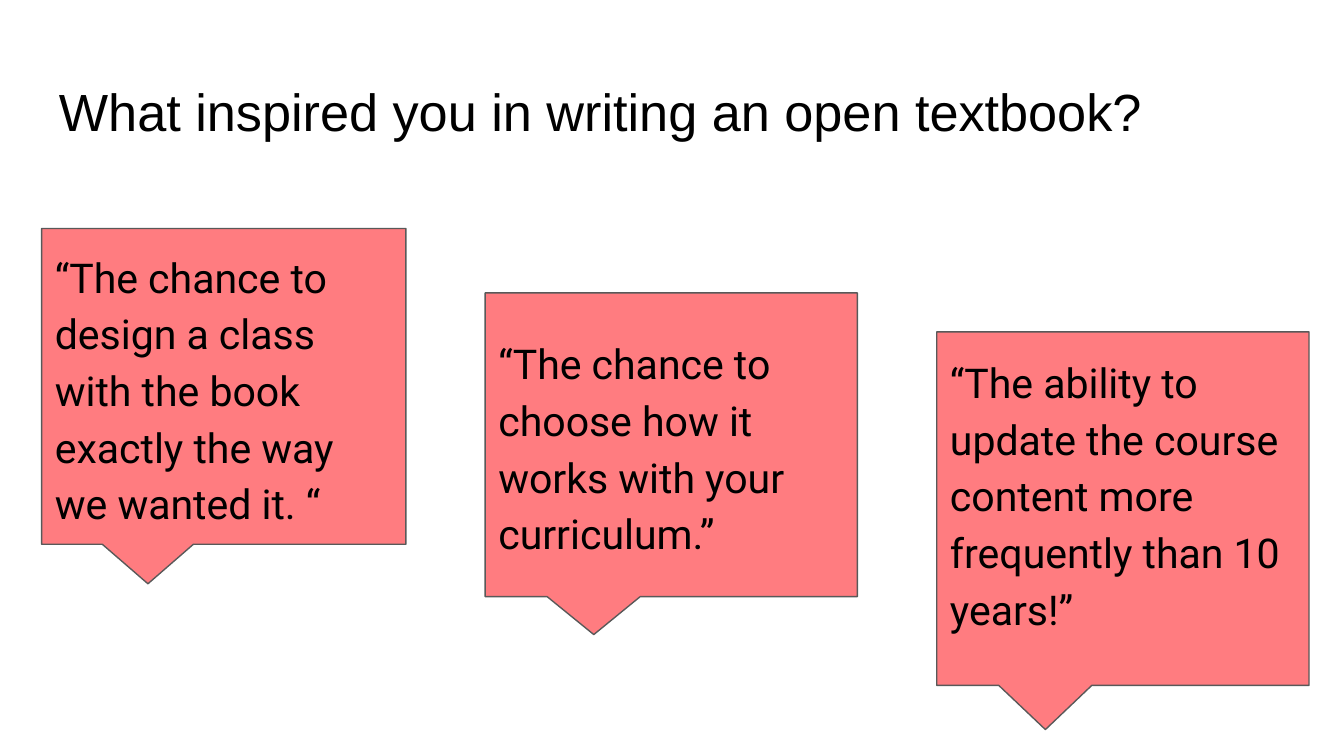
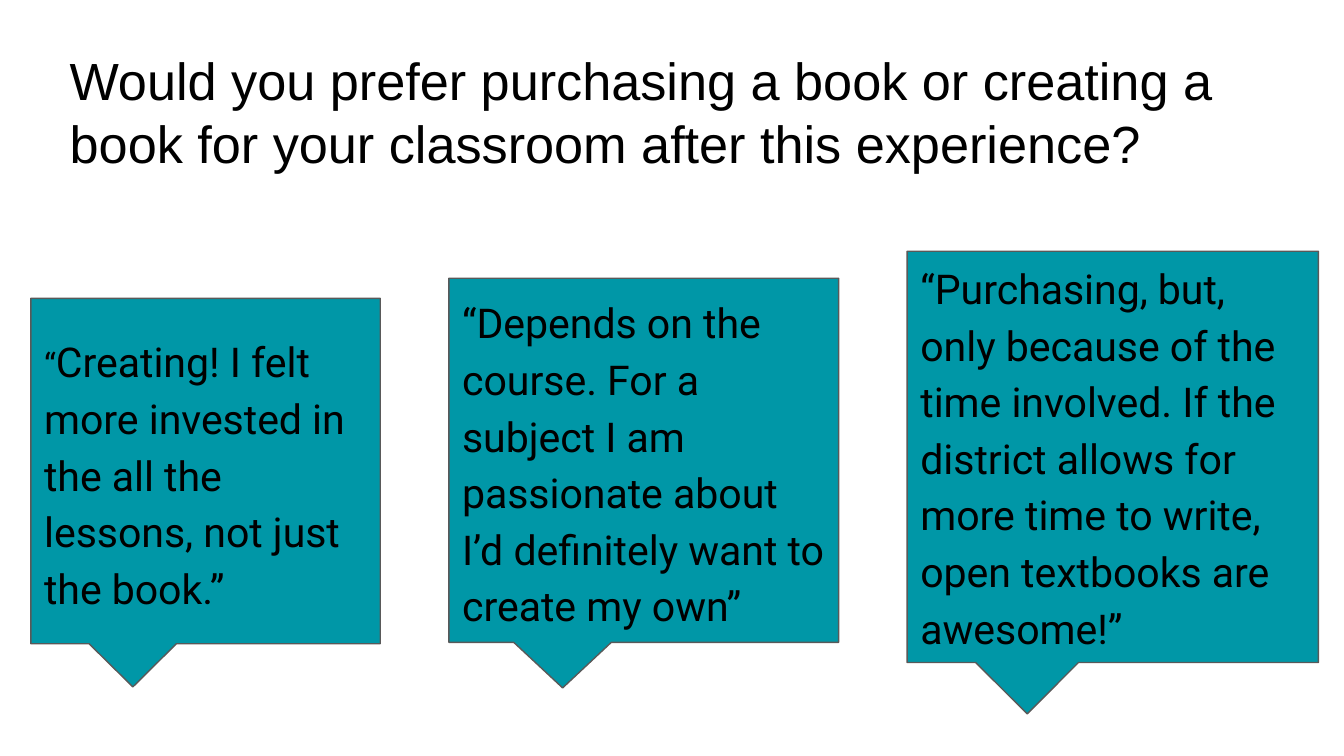
from dataclasses import dataclass
from typing import NamedTuple

import pptx
import pptx.dml.color
import pptx.enum.shapes
import pptx.enum.text
import pptx.util

MIDDLE = pptx.enum.text.MSO_ANCHOR.MIDDLE
TOP = pptx.enum.text.MSO_ANCHOR.TOP

SLIDE_WIDTH = pptx.util.Inches(10)
SLIDE_HEIGHT = pptx.util.Inches(5.625)
COLUMN = SLIDE_WIDTH / 100
ROW = SLIDE_HEIGHT / 56.25
BLANK_LAYOUT = 6


@dataclass(frozen=True)
class Theme:
    background: str = "FFFFFF"
    ink: str = "000000"
    outline: str = "595959"
    coral: str = "FF7C80"
    teal: str = "0097A7"
    title_font: str = "Arial"
    quote_font: str = "Roboto"
    title_size: float = 28
    quote_size: float = 22
    small_quote_size: float = 18
    outline_width: float = 0.75
    quote_spacing: float = 1.15
    tail: tuple[float, float] = (-0.208, 0.625)


THEME = Theme()


class Area(NamedTuple):
    """A place on the grid, in columns and rows."""
    column: float
    row: float
    columns: float
    rows: float

    def lengths(self) -> tuple[int, int, int, int]:
        return (round(self.column * COLUMN), round(self.row * ROW),
                round(self.columns * COLUMN), round(self.rows * ROW))


@dataclass(frozen=True)
class Quote:
    area: Area
    words: str
    opening: str = ""  # smaller mark set before the words
    rows_above: float = 1
    rows_below: float = 1


@dataclass(frozen=True)
class Question:
    area: Area
    words: str
    color: str
    quotes: tuple[Quote, ...]


QUESTIONS = (
    Question(
        Area(3.4, 4.9, 93.2, 6.3),
        "What inspired you in writing an open textbook?",
        THEME.coral,
        (
            Quote(Area(3.1, 17, 27.1, 23.5),
                  "“The chance to design a class with the book exactly "
                  "the way we wanted it. “"),
            Quote(Area(36.1, 21.8, 27.7, 22.6),
                  "“The chance to choose how it works with your curriculum.”"),
            Quote(Area(69.7, 24.7, 27.7, 26.3),
                  "“The ability to update the course content more "
                  "frequently than 10 years!”", rows_below=3.5),
        ),
    ),
    Question(
        Area(4.2, 2.6, 91.5, 15),
        "Would you prefer purchasing a book or creating a book for your "
        "classroom after this experience?",
        THEME.teal,
        (
            Quote(Area(2.3, 22.2, 26, 25.7),
                  "Creating! I felt more invested in the all the lessons, "
                  "not just the book.”", opening="“"),
            Quote(Area(33.4, 20.7, 29, 27.1),
                  "“Depends on the course. For a subject I am passionate "
                  "about I’d definitely want to create my own”"),
            Quote(Area(67.5, 18.7, 30.6, 30.6),
                  "“Purchasing, but, only because of the time involved. If "
                  "the district allows for more time to write, open "
                  "textbooks are awesome!”", rows_above=0.2, rows_below=0.6),
        ),
    ),
)


def rgb(color: str) -> pptx.dml.color.RGBColor:
    return pptx.dml.color.RGBColor.from_string(color)


def write(frame, *runs: tuple[str, float], font: str, spacing: float = 1.0,
          anchor=TOP, rows_above: float = 1, rows_below: float = 1) -> None:
    """Fill a frame with one paragraph of (words, size) runs."""
    frame.word_wrap = True
    frame.vertical_anchor = anchor
    frame.margin_left = frame.margin_right = round(COLUMN)
    frame.margin_top = round(rows_above * ROW)
    frame.margin_bottom = round(rows_below * ROW)
    paragraph = frame.paragraphs[0]
    paragraph.alignment = pptx.enum.text.PP_ALIGN.LEFT
    paragraph.line_spacing = spacing
    for words, size in runs:
        run = paragraph.add_run()
        run.text = words
        run.font.name = font
        run.font.size = pptx.util.Pt(size)
        run.font.color.rgb = rgb(THEME.ink)


def draw_quote(slide, quote: Quote, color: str) -> None:
    bubble = slide.shapes.add_shape(
        pptx.enum.shapes.MSO_SHAPE.RECTANGULAR_CALLOUT, *quote.area.lengths())
    bubble.adjustments[0], bubble.adjustments[1] = THEME.tail
    bubble.shadow.inherit = False
    bubble.fill.solid()
    bubble.fill.fore_color.rgb = rgb(color)
    bubble.line.color.rgb = rgb(THEME.outline)
    bubble.line.width = pptx.util.Pt(THEME.outline_width)
    runs = [(quote.words, THEME.quote_size)]
    if quote.opening:
        runs.insert(0, (quote.opening, THEME.small_quote_size))
    write(bubble.text_frame, *runs, font=THEME.quote_font,
          spacing=THEME.quote_spacing, anchor=MIDDLE,
          rows_above=quote.rows_above, rows_below=quote.rows_below)


def draw_question(deck, question: Question) -> None:
    slide = deck.slides.add_slide(deck.slide_layouts[BLANK_LAYOUT])
    slide.background.fill.solid()
    slide.background.fill.fore_color.rgb = rgb(THEME.background)
    title = slide.shapes.add_textbox(*question.area.lengths())
    write(title.text_frame, (question.words, THEME.title_size),
          font=THEME.title_font)
    for quote in question.quotes:
        draw_quote(slide, quote, question.color)


def main() -> None:
    deck = pptx.Presentation()
    deck.slide_width = SLIDE_WIDTH
    deck.slide_height = SLIDE_HEIGHT
    for question in QUESTIONS:
        draw_question(deck, question)
    deck.save("out.pptx")


if __name__ == "__main__":
    main()
